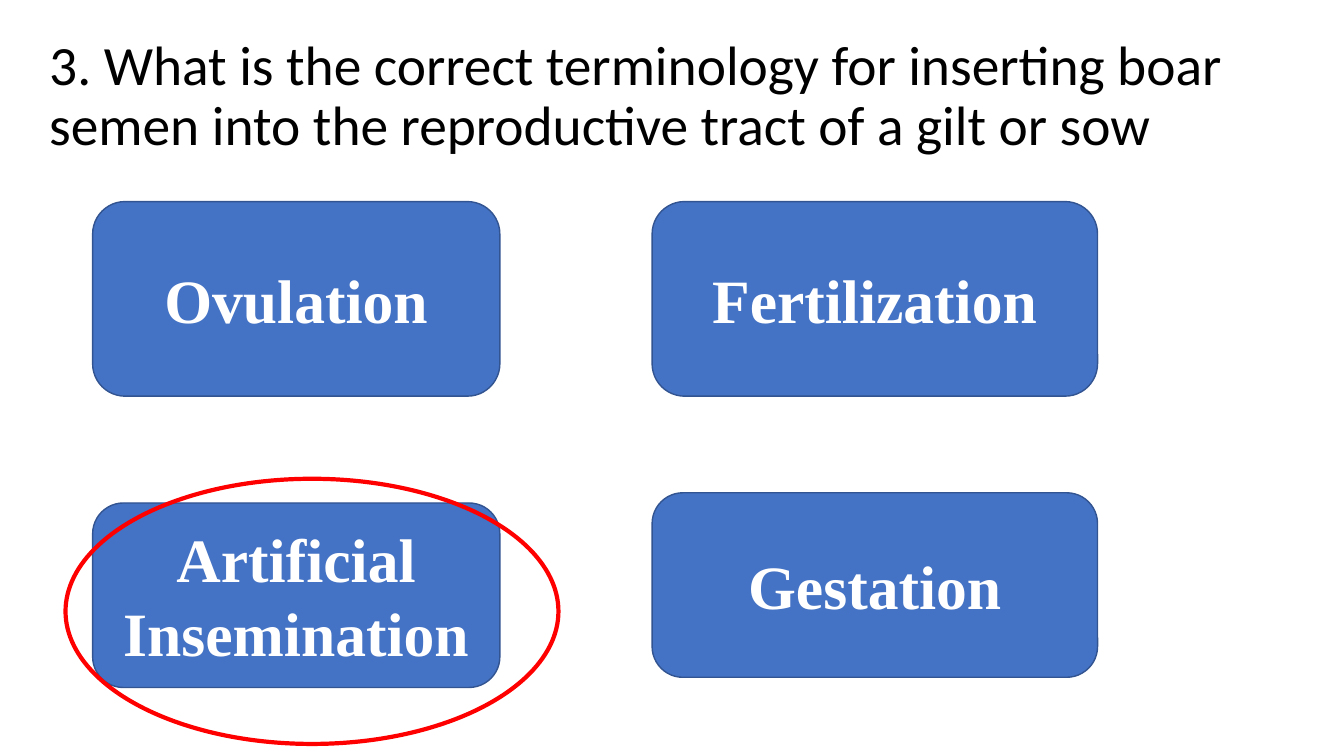
from dataclasses import dataclass

from pptx import Presentation
from pptx.dml.color import RGBColor
from pptx.enum.shapes import MSO_SHAPE as Preset
from pptx.enum.text import MSO_ANCHOR as Anchor, PP_ALIGN as Align
from pptx.shapes.autoshape import Shape
from pptx.slide import Slide
from pptx.text.text import TextFrame
from pptx.util import Pt


@dataclass(frozen=True)
class Theme:
    question_font: str = "Calibri"
    answer_font: str = "Times New Roman"
    question_size: float = 39.6
    answer_size: float = 44
    question_color: str = "000000"
    answer_color: str = "FFFFFF"
    card_fill: str = "4472C4"
    card_line: str = "325491"
    mark: str = "FF0000"


@dataclass(frozen=True)
class Box:
    left: float
    top: float
    width: float
    height: float

    def lengths(self) -> tuple[Pt, Pt, Pt, Pt]:
        return Pt(self.left), Pt(self.top), Pt(self.width), Pt(self.height)


@dataclass(frozen=True)
class Answer:
    wording: str
    box: Box


THEME = Theme()
QUESTION = (
    "3. What is the correct terminology for inserting boar semen "
    "into the reproductive tract of a gilt or sow"
)
QUESTION_BOX = Box(28.1, 23, 876.2, 94)
LEFT, LEFT_WIDTH = 66.2, 290.9
RIGHT, RIGHT_WIDTH = 465.8, 318.2
UPPER, UPPER_HEIGHT, LOWER_HEIGHT = 144, 139, 131.8
ANSWERS = (
    Answer("Ovulation", Box(LEFT, UPPER, LEFT_WIDTH, UPPER_HEIGHT)),
    Answer("Fertilization", Box(RIGHT, UPPER, RIGHT_WIDTH, UPPER_HEIGHT)),
    Answer("Artificial Insemination", Box(LEFT, 359.3, LEFT_WIDTH, LOWER_HEIGHT)),
    Answer("Gestation", Box(RIGHT, 352, RIGHT_WIDTH, LOWER_HEIGHT)),
)
CORRECT_MARK = Box(46.8, 342, 352.1, 189.4)


def write(frame: TextFrame, wording: str, font: str, size: float, color: str,
          align: Align, bold: bool = False) -> None:
    frame.text = wording
    frame.word_wrap = True
    frame.vertical_anchor = Anchor.MIDDLE
    paragraph = frame.paragraphs[0]
    paragraph.alignment = align
    for run in paragraph.runs:
        run.font.name = font
        run.font.size = Pt(size)
        run.font.bold = bold
        run.font.color.rgb = RGBColor.from_string(color)


def outline(slide: Slide, preset: Preset, box: Box, color: str, weight: float) -> Shape:
    figure = slide.shapes.add_shape(preset, *box.lengths())
    figure.shadow.inherit = False
    figure.line.color.rgb = RGBColor.from_string(color)
    figure.line.width = Pt(weight)
    return figure


def draw_question(slide: Slide) -> None:
    question = slide.shapes.add_textbox(*QUESTION_BOX.lengths()).text_frame
    write(question, QUESTION, THEME.question_font, THEME.question_size,
          THEME.question_color, Align.LEFT)
    question.paragraphs[0].line_spacing = 0.9


def draw_answer(slide: Slide, answer: Answer) -> None:
    card = outline(slide, Preset.ROUNDED_RECTANGLE, answer.box, THEME.card_line, 1)
    card.fill.solid()
    card.fill.fore_color.rgb = RGBColor.from_string(THEME.card_fill)
    write(card.text_frame, answer.wording, THEME.answer_font, THEME.answer_size,
          THEME.answer_color, Align.CENTER, bold=True)


def main() -> None:
    deck = Presentation()
    deck.slide_width, deck.slide_height = Pt(960), Pt(540)
    slide = deck.slides.add_slide(deck.slide_layouts[6])
    draw_question(slide)
    for answer in ANSWERS:
        draw_answer(slide, answer)
    outline(slide, Preset.OVAL, CORRECT_MARK, THEME.mark, 3).fill.background()
    deck.save("out.pptx")


if __name__ == "__main__":
    main()
